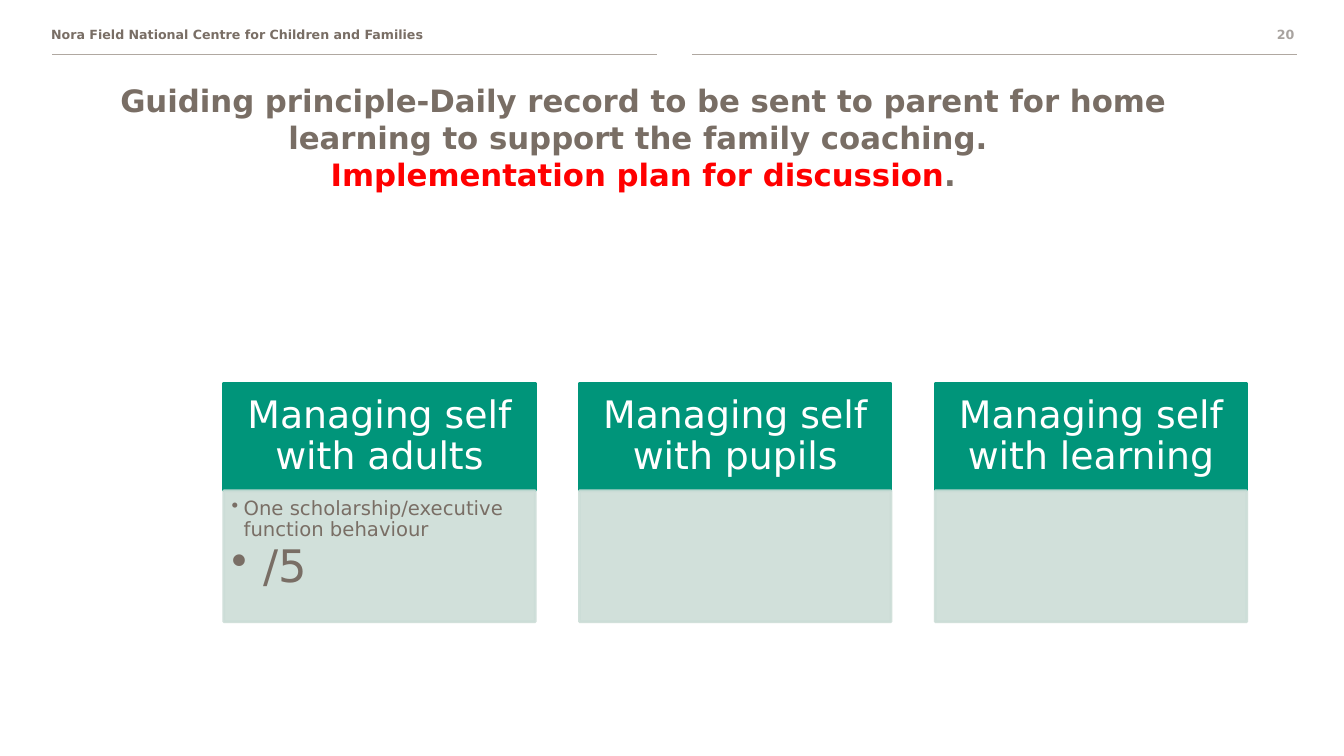
from lxml.etree import SubElement
from pptx import Presentation
from pptx.dml.color import RGBColor
from pptx.enum.shapes import MSO_CONNECTOR, MSO_SHAPE
from pptx.enum.text import MSO_ANCHOR, MSO_AUTO_SIZE, PP_ALIGN
from pptx.oxml.ns import qn
from pptx.util import Cm, Pt

FONT = "DejaVu Sans"
BROWN, RULE, NUMBER = "796E65", "B0A8A1", "A8A39F"
GREEN, PALE, WHITE, RED = "00957A", "CCDDD7", "FFFFFF", "FF0000"
CARDS = [
    ("Managing self with adults", [("One scholarship/executive function behaviour", 14, 0.3), ("/5", 32, 0.79)]),
    ("Managing self with pupils", []),
    ("Managing self with learning", []),
]


def rgb(color):
    """Turn a hex string into a colour."""
    return RGBColor.from_string(color)


def style(p, size, color, bold=False, align=PP_ALIGN.LEFT):
    """Set the font and alignment of a paragraph."""
    p.alignment = align
    p.font.name, p.font.size, p.font.bold = FONT, Pt(size), bold
    p.font.color.rgb = rgb(color)


def set_insets(tf, left, top, right, bottom):
    """Set the text margins in centimetres."""
    tf.margin_left, tf.margin_top = Cm(left), Cm(top)
    tf.margin_right, tf.margin_bottom = Cm(right), Cm(bottom)


def add_label(s, x, y, w, h, text, color, align):
    """Add a small bold label of the page header."""
    tf = s.shapes.add_textbox(Cm(x), Cm(y), Cm(w), Cm(h)).text_frame
    tf.word_wrap = True
    tf.text = text
    style(tf.paragraphs[0], 9, color, True, align)


def add_header(s, x, y, w):
    """Add the two rules, the organisation and the page number."""
    rule_w = 15.24
    for left in (x, x + w - rule_w):
        line = s.shapes.add_connector(MSO_CONNECTOR.STRAIGHT, Cm(left), Cm(y), Cm(left + rule_w), Cm(y))
        line.line.color.rgb, line.line.width = rgb(RULE), Pt(1)
        SubElement(line._element.spPr, qn("a:effectLst"))
    add_label(s, x - 0.28, y - 0.81, 15.16, 0.64, "Nora Field National Centre for Children and Families", BROWN, PP_ALIGN.LEFT)
    add_label(s, x + w - 1.78, y - 0.81, 1.96, 0.64, "20", NUMBER, PP_ALIGN.RIGHT)


def add_title(s, x, y, w, h):
    """Fill and place the title placeholder."""
    title = s.shapes.title
    title.left, title.top, title.width, title.height = Cm(x), Cm(y), Cm(w), Cm(h)
    tf = title.text_frame
    tf.word_wrap, tf.auto_size, tf.vertical_anchor = True, MSO_AUTO_SIZE.NONE, MSO_ANCHOR.TOP
    p = tf.paragraphs[0]
    style(p, 22, BROWN, True, PP_ALIGN.CENTER)
    p.add_run().text = "Guiding principle-Daily record to be sent to parent for home learning to support the family coaching. "
    p.add_line_break()
    r = p.add_run()
    r.text = "Implementation plan for discussion"
    r.font.color.rgb = rgb(RED)
    p.add_run().text = "."


def add_panel(s, x, y, w, h, color, alpha=100):
    """Add a filled rectangle and return its text frame."""
    sp = s.shapes.add_shape(MSO_SHAPE.RECTANGLE, Cm(x), Cm(y), Cm(w), Cm(h))
    sp.shadow.inherit = False
    sp.fill.solid()
    sp.fill.fore_color.rgb = sp.line.color.rgb = rgb(color)
    sp.line.width = Pt(2)
    if alpha < 100:
        for clr in sp._element.spPr.iter(qn("a:srgbClr")):
            SubElement(clr, qn("a:alpha"), val=str(alpha * 1000))
    sp.text_frame.word_wrap = True
    return sp.text_frame


def add_bullet(p, text, size, indent):
    """Write a bulleted paragraph with a hanging indent."""
    p.text = text
    style(p, size, BROWN)
    p.line_spacing, p.space_after = 0.9, Pt(size * 0.15)
    pPr = p._p.get_or_add_pPr()
    pPr.set("marL", str(Cm(indent)))
    pPr.set("indent", str(-Cm(indent)))
    bullet = pPr.makeelement(qn("a:buChar"), {"char": "•"})
    pPr.find(qn("a:defRPr")).addprevious(bullet)


def add_card(s, x, y, w, h, heading, bullets):
    """Add a card with a green heading over a pale body."""
    head_h = 2.72
    tf = add_panel(s, x, y, w, head_h, GREEN)
    set_insets(tf, 0.53, 0.3, 0.53, 0.3)
    tf.vertical_anchor = MSO_ANCHOR.MIDDLE
    tf.text = heading
    style(tf.paragraphs[0], 27, WHITE, align=PP_ALIGN.CENTER)
    tf.paragraphs[0].line_spacing = 0.9

    tf = add_panel(s, x, y + head_h, w, h - head_h, PALE, 90)
    set_insets(tf, 0.2, 0.2, 0.28, 0.3)
    tf.vertical_anchor = MSO_ANCHOR.TOP
    for i, bullet in enumerate(bullets):
        add_bullet(tf.add_paragraph() if i else tf.paragraphs[0], *bullet)


def add_cards(s, x, y, w, h):
    """Spread the cards evenly over the box."""
    card_w = 7.85
    step = (w - card_w) / (len(CARDS) - 1)
    for i, card in enumerate(CARDS):
        add_card(s, x + i * step, y, card_w, h, *card)


def main():
    """Build and save the slide."""
    prs = Presentation()
    prs.slide_width, prs.slide_height = Cm(33.87), Cm(19.05)
    s = prs.slides.add_slide(prs.slide_layouts[5])
    add_header(s, 1.32, 1.37, 31.37)
    add_title(s, 0.97, 1.93, 30.48, 1.93)
    add_cards(s, 5.64, 9.65, 25.78, 6.02)
    prs.save("out.pptx")


if __name__ == "__main__":
    main()
